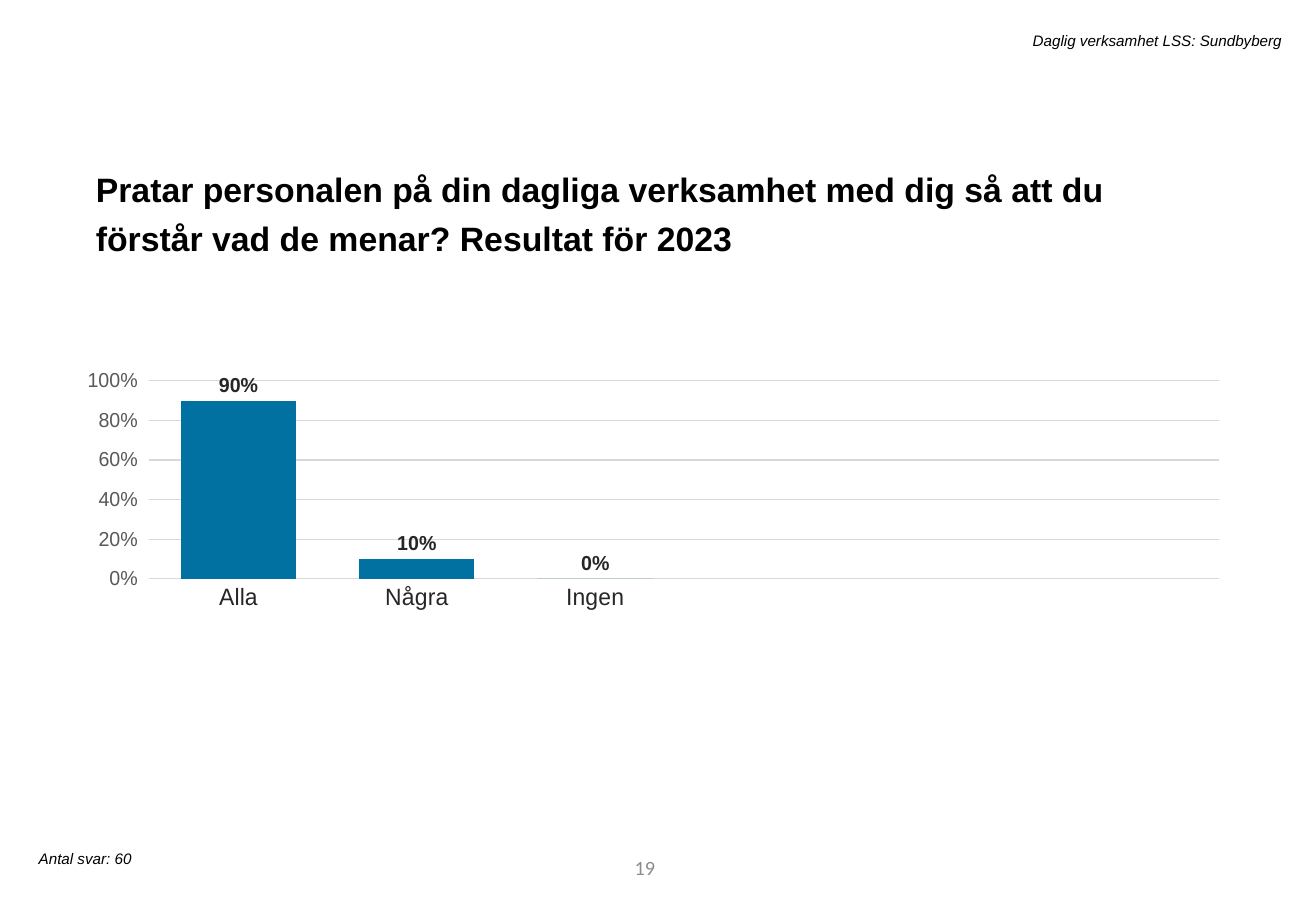
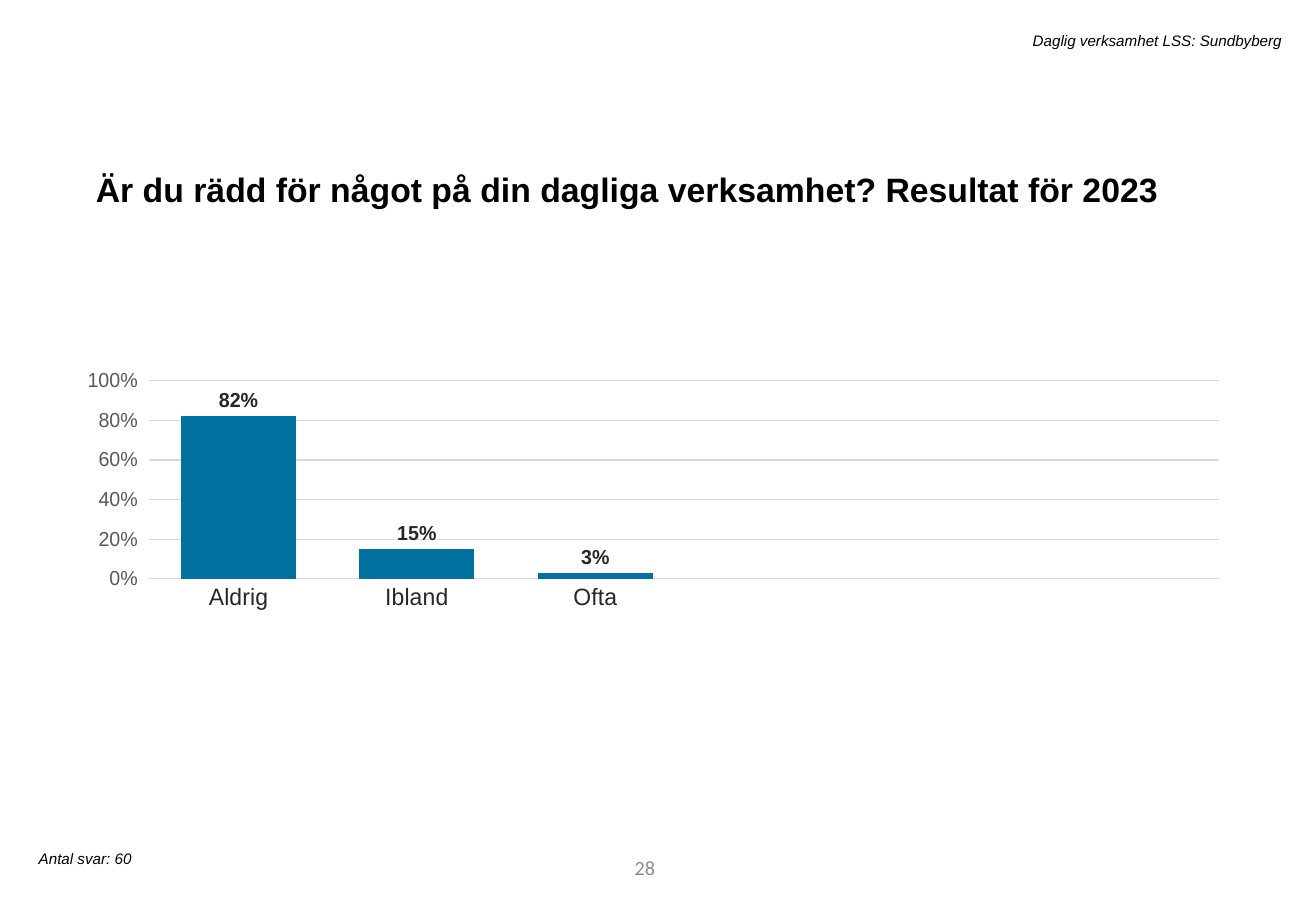
from lxml import etree
from pptx import Presentation
from pptx import util as u
from pptx.chart import data
from pptx.dml import color
from pptx.enum import chart as ch, text

BLACK, DARK, MID, PALE = "000000", "262626", "595959", "D9D9D9"
BLUE, GREY = "0071A1", "8C8C8C"
LEFT, RIGHT = text.PP_ALIGN.LEFT, text.PP_ALIGN.RIGHT
TOP, MIDDLE = text.MSO_ANCHOR.TOP, text.MSO_ANCHOR.MIDDLE

# Text styles
TITLE = dict(name="Arial", size=u.Pt(20), bold=True, color=BLACK)
NOTE = dict(name="Arial", size=u.Pt(9), italic=True, color=BLACK)
PAGE = dict(name="Calibri", size=u.Pt(12), color=GREY)
BASE = dict(name="Arial", size=u.Pt(10), color=BLACK)
CATS = dict(name="Arial", size=u.Pt(14), color=DARK)
VALS = dict(name="Arial", size=u.Pt(12), color=MID)
LABEL = dict(name="Arial", size=u.Pt(12), bold=True, color=DARK)

# Places: left, top, width, height in cm
TITLE_BOX = (1.75, 3.24, 23.88, 1.19)
CHART_BOX = (1.83, 6.42, 23.88, 10.03)
PAGE_BOX = (7.75, 17.64, 6.2, 1.02)
COUNT_BOX = (0.56, 17.64, 7.21, 0.64)
HEAD_BOX = (4.55, 0.53, 22.5, 0.64)
PLOT = dict(x=0.025, y=0.154, w=0.966, h=0.413)
SLOTS = 6

# What differs from slide to slide
PAGES = [
    ("19", "Pratar personalen på din dagliga verksamhet med dig så att du "
           "förstår vad de menar? Resultat för 2023",
     {"Alla": 0.9, "Några": 0.1, "Ingen": 0}),
    ("28", "Är du rädd för något på din dagliga verksamhet? Resultat för 2023",
     {"Aldrig": 0.82, "Ibland": 0.15, "Ofta": 0.03}),
]


def paint(font, style):
    for key, val in style.items():
        if key == "color":
            font.color.rgb = color.RGBColor.from_string(val)
        else:
            setattr(font, key, val)


def write(shape, box, words, style, align=LEFT, anchor=TOP):
    for key, val in zip(("left", "top", "width", "height"), box):
        setattr(shape, key, u.Cm(val))
    frame = shape.text_frame
    frame.word_wrap = True
    frame.auto_size = text.MSO_AUTO_SIZE.NONE
    frame.vertical_anchor = anchor
    para = frame.paragraphs[0]
    para.alignment = align
    run = para.add_run()
    run.text = words
    paint(run.font, style)
    return para


# A4 slide format
prs = Presentation()
prs.slide_width, prs.slide_height = u.Emu(9906000), u.Emu(6858000)

for page, title, votes in PAGES:
    slide = prs.slides.add_slide(prs.slide_layouts[5])

    # Title, header and footer
    para = write(slide.shapes.title, TITLE_BOX, title, TITLE)
    para.line_spacing = 1.2
    para.space_before = u.Pt(10)
    for box, words, style, align, anchor in (
            (PAGE_BOX, page, PAGE, RIGHT, MIDDLE),
            (COUNT_BOX, "Antal svar: 60", NOTE, LEFT, TOP),
            (HEAD_BOX, "Daglig verksamhet LSS: Sundbyberg", NOTE, RIGHT, TOP)):
        field = slide.shapes.add_textbox(0, 0, 0, 0)
        write(field, box, words, style, align, anchor)

    # Chart data, padded with empty slots
    pad = SLOTS - len(votes)
    table = data.CategoryChartData(number_format="0%")
    table.categories = list(votes) + [""] * pad
    table.add_series("Series 1", list(votes.values()) + [None] * pad)
    chart = slide.shapes.add_chart(
        ch.XL_CHART_TYPE.COLUMN_CLUSTERED, *map(u.Cm, CHART_BOX), table).chart
    chart.has_title = chart.has_legend = False
    paint(chart.font, BASE)

    # Columns and their labels
    plot = chart.plots[0]
    plot.gap_width = 55
    plot.vary_by_categories = False
    bars = plot.series[0]
    bars.format.fill.solid()
    bars.format.fill.fore_color.rgb = color.RGBColor.from_string(BLUE)
    labels = bars.data_labels
    for key, val in dict(show_value=True, number_format="0%",
                         number_format_is_linked=False,
                         position=ch.XL_LABEL_POSITION.OUTSIDE_END).items():
        setattr(labels, key, val)
    paint(labels.font, LABEL)

    # Axes
    cat, val = chart.category_axis, chart.value_axis
    cat.major_tick_mark = ch.XL_TICK_MARK.NONE
    paint(cat.tick_labels.font, CATS)
    for key, num in dict(minimum_scale=0, maximum_scale=1, major_unit=0.2,
                         has_major_gridlines=True).items():
        setattr(val, key, num)
    val.tick_labels.number_format = "0%"
    val.tick_labels.number_format_is_linked = False
    paint(val.tick_labels.font, VALS)
    val.format.line.fill.background()
    for line in (cat.format.line, val.major_gridlines.format.line):
        line.color.rgb = color.RGBColor.from_string(PALE)
        line.width = u.Pt(0.75)

    # Fixed plot area
    area = chart._chartSpace.chart.plotArea
    ns = "{%s}" % area.nsmap["c"]
    for old in area.findall(ns + "layout"):
        area.remove(old)
    layout = etree.Element(ns + "layout")
    area.insert(0, layout)
    manual = etree.SubElement(layout, ns + "manualLayout")
    marks = dict(layoutTarget="inner", xMode="edge", yMode="edge", **PLOT)
    for key, num in marks.items():
        etree.SubElement(manual, ns + key, val=str(num))

prs.save("out.pptx")
